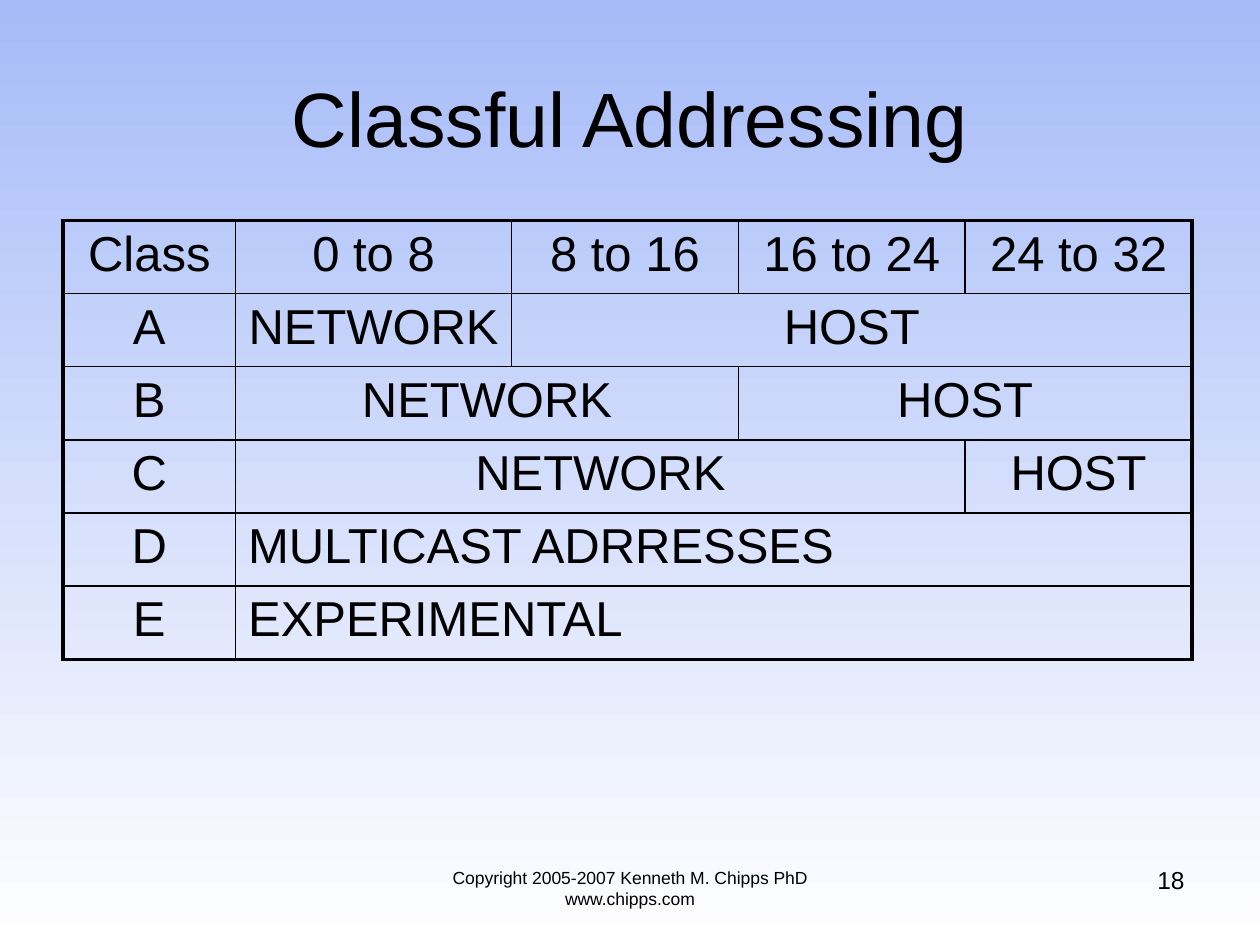
import pptx
import pptx.util
import pptx.dml.color
import pptx.enum.text
import pptx.oxml

Pt = pptx.util.Pt
ALIGN = pptx.enum.text.PP_ALIGN
ANCHOR = pptx.enum.text.MSO_ANCHOR
BLACK = pptx.dml.color.RGBColor(0, 0, 0)
BLUE = pptx.dml.color.RGBColor(0xA6, 0xBB, 0xF8)
WHITE = pptx.dml.color.RGBColor(255, 255, 255)
NS = "http://schemas.openxmlformats.org/drawingml/2006/main"
THICK, THIN = 2.25, 1
COLS = [98.64, 157.7, 129.6, 129.6, 129.6]
ROW = 41.8
ROWS = [
    [("Class", 1), ("0 to 8", 1), ("8 to 16", 1), ("16 to 24", 1), ("24 to 32", 1)],
    [("A", 1), ("NETWORK", 1), ("HOST", 3)],
    [("B", 1), ("NETWORK", 2), ("HOST", 2)],
    [("C", 1), ("NETWORK", 3), ("HOST", 1)],
    [("D", 1), ("MULTICAST ADRRESSES", 4)],
    [("E", 1), ("EXPERIMENTAL", 4)],
]


def write(frame, text, size, align):
    frame.text = text
    para = frame.paragraphs[0]
    para.alignment = align
    for run in para.runs:
        run.font.name = "Arial"
        run.font.size = Pt(size)
        run.font.color.rgb = BLACK


def edge(cell, sides):
    props = cell._tc.get_or_add_tcPr()
    for place, (side, width) in enumerate(sides.items()):
        line = pptx.oxml.parse_xml(
            f'<a:ln{side} xmlns:a="{NS}" w="{Pt(width)}">'
            f'<a:solidFill><a:srgbClr val="{BLACK}"/></a:solidFill>'
            f'</a:ln{side}>')
        props.insert(place, line)


def paint(slide):
    fill = slide.background.fill
    fill.gradient()
    fill.gradient_angle = 270
    for stop, color in zip(fill.gradient_stops, (BLUE, WHITE)):
        stop.color.rgb = color


def head(slide, left, top, width, height):
    title = slide.shapes.title
    title.left, title.top = Pt(left), Pt(top)
    title.width, title.height = Pt(width), Pt(height)
    title.text_frame.vertical_anchor = ANCHOR.MIDDLE
    write(title.text_frame, "Classful Addressing", 44, ALIGN.CENTER)


def grid(slide, left, top):
    count = len(COLS)
    table = slide.shapes.add_table(
        len(ROWS), count, Pt(left), Pt(top),
        Pt(sum(COLS)), Pt(ROW * len(ROWS))).table
    table.first_row = table.horz_banding = False
    for col, width in zip(table.columns, COLS):
        col.width = Pt(width)
    for y, items in enumerate(ROWS):
        table.rows[y].height = Pt(ROW)
        x = 0
        for text, span in items:
            end = x + span
            cell = table.cell(y, x)
            if span > 1:
                cell.merge(table.cell(y, end - 1))
            align = ALIGN.LEFT if span == count - 1 else ALIGN.CENTER
            write(cell.text_frame, text, 28, align)
            sides = {
                "L": THICK if x == 0 else THIN,
                "R": THICK if end == count else THIN,
                "T": THICK if y == 0 else THIN,
                "B": THICK if y == len(ROWS) - 1 else THIN,
            }
            for part in range(x, end):
                cell = table.cell(y, part)
                cell.fill.background()
                edge(cell, sides)
            x = end


def note(slide, text, size, align, left, top, width, height):
    box = slide.shapes.add_textbox(Pt(left), Pt(top), Pt(width), Pt(height))
    box.text_frame.word_wrap = True
    write(box.text_frame, text, size, align)


def main():
    deck = pptx.Presentation()
    deck.slide_width, deck.slide_height = Pt(720), Pt(540)
    slide = deck.slides.add_slide(deck.slide_layouts[5])
    paint(slide)
    note(slide, "Copyright 2005-2007 Kenneth M. Chipps PhD www.chipps.com",
         10, ALIGN.CENTER, 216, 492, 288, 37.5)
    note(slide, "18", 14, ALIGN.RIGHT, 516, 490.5, 168, 37.5)
    head(slide, 36, 21.6, 648, 90)
    grid(slide, 36, 126)
    deck.save("out.pptx")


if __name__ == "__main__":
    main()
